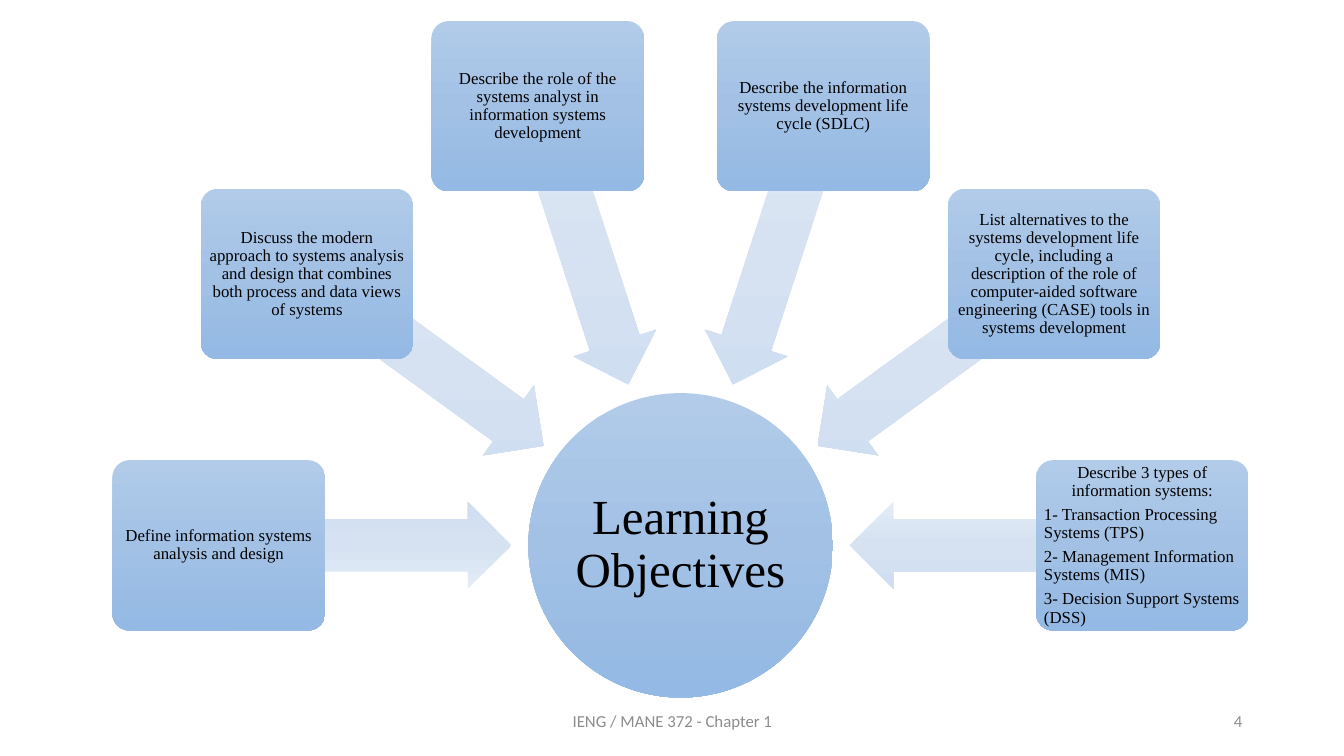
from copy import deepcopy
from math import cos, radians, sin

from pptx import Presentation
from pptx.dml.color import RGBColor
from pptx.enum.shapes import MSO_SHAPE
from pptx.enum.text import MSO_ANCHOR, PP_ALIGN
from pptx.oxml.ns import qn
from pptx.util import Inches, Pt

OVAL, ROUND, ARROW = MSO_SHAPE.OVAL, MSO_SHAPE.ROUNDED_RECTANGLE, MSO_SHAPE.LEFT_ARROW
LEFT, MID, RIGHT = PP_ALIGN.LEFT, PP_ALIGN.CENTER, PP_ALIGN.RIGHT

COLORS = {"ink": "000000", "grey": "8C8C8C"}
SHADES = {
    "node": ("B1CBE9", "A3C1E5", "93B9E4"),
    "arrow": ("E3EBF6", "D6E2F2", "D0DEF1"),
}

# Wheel layout in inches
HUB_X, HUB_Y, HUB_D = 6.75, 5.41, 3.02
BOX_R, BOX_W, BOX_H = 4.58, 2.11, 1.69
ARROW_R, ARROW_W, ARROW_H = 3.13, 2.9, 0.86

GOALS = [
    ["Define information systems analysis and design"],
    ["Discuss the modern approach to systems analysis and design that combines "
     "both process and data views of systems"],
    ["Describe the role of the systems analyst in information systems development"],
    ["Describe the information systems development life cycle (SDLC)"],
    ["List alternatives to the systems development life cycle, including a description "
     "of the role of computer-aided software engineering (CASE) tools in systems development"],
    ["Describe 3 types of information systems:",
     "1- Transaction Processing Systems (TPS)",
     "2- Management Information Systems (MIS)",
     "3- Decision Support Systems (DSS)"],
]


def write(shape, lines, size=12, font="Times New Roman", color="ink",
          align=MID, rest=LEFT, inset=0.03, line=0.9, after=0.35):
    """Fill a shape with paragraphs; those after the first align by rest."""
    frame = shape.text_frame
    frame.word_wrap = True
    frame.vertical_anchor = MSO_ANCHOR.MIDDLE
    frame.margin_left = frame.margin_right = Inches(inset)
    frame.margin_top = frame.margin_bottom = Inches(min(inset, 0.05))
    for i, text in enumerate(lines):
        para = frame.add_paragraph() if i else frame.paragraphs[0]
        para.alignment = rest if i else align
        para.line_spacing = line
        para.space_after = Pt(size * after)
        run = para.add_run()
        run.text = text
        run.font.size = Pt(size)
        run.font.name = font
        run.font.color.rgb = RGBColor.from_string(COLORS[color])


def shade(shape, name, angle=270):
    """Give a shape a three-stop gradient that stays upright when it turns."""
    shape.fill.gradient()
    shape.fill.gradient_angle = angle
    grad = shape._element.spPr.find(qn("a:gradFill"))
    grad.set("rotWithShape", "0")
    stops = grad.find(qn("a:gsLst"))
    stops.insert(1, deepcopy(stops[0]))
    for i, stop in enumerate(shape.fill.gradient_stops):
        stop.position = i / 2
        stop.color.rgb = RGBColor.from_string(SHADES[name][i])


def add_shape(slide, kind, x, y, w, h, name, angle=270):
    """Add a shaded preset shape centred on x, y."""
    shape = slide.shapes.add_shape(
        kind, Inches(x - w / 2), Inches(y - h / 2), Inches(w), Inches(h))
    shape.shadow.inherit = False
    shape.line.fill.background()
    shade(shape, name, angle)
    return shape


def place(turn, dist):
    """Point on the wheel, turned clockwise from the left."""
    return (HUB_X - dist * cos(radians(turn)), HUB_Y - dist * sin(radians(turn)))


def add_arrow(slide, turn):
    angle = 270 if turn else 90  # the first arrow is lit from below
    arrow = add_shape(slide, ARROW, *place(turn, ARROW_R), ARROW_W, ARROW_H, "arrow", angle)
    arrow.adjustments[0] = 0.6
    arrow.adjustments[1] = 0.5
    arrow.rotation = (180 + turn) % 360


def add_goal(slide, turn, lines):
    box = add_shape(slide, ROUND, *place(turn, BOX_R), BOX_W, BOX_H, "node")
    box.adjustments[0] = 0.1
    write(box, lines)


def add_foot(slide, text, x, w, align):
    box = slide.shapes.add_textbox(Inches(x), Inches(6.95), Inches(w), Inches(0.4))
    write(box, [text], font="Calibri", color="grey", align=align,
          inset=0.1, line=1.0, after=0)


def main():
    deck = Presentation()
    deck.slide_width, deck.slide_height = Inches(13.33), Inches(7.5)
    slide = deck.slides.add_slide(deck.slide_layouts[6])

    # Hub
    hub = add_shape(slide, OVAL, HUB_X, HUB_Y, HUB_D, HUB_D, "node")
    write(hub, ["Learning Objectives"], size=35, inset=0.02)

    # Goals around the hub, each with its arrow
    step = 180 / (len(GOALS) - 1)
    for i, lines in enumerate(GOALS):
        add_arrow(slide, i * step)
        add_goal(slide, i * step, lines)

    # Footer
    add_foot(slide, "4", 9.42, 3, RIGHT)
    add_foot(slide, "IENG / MANE 372 - Chapter 1", 4.42, 4.5, MID)

    deck.save("out.pptx")


if __name__ == "__main__":
    main()
